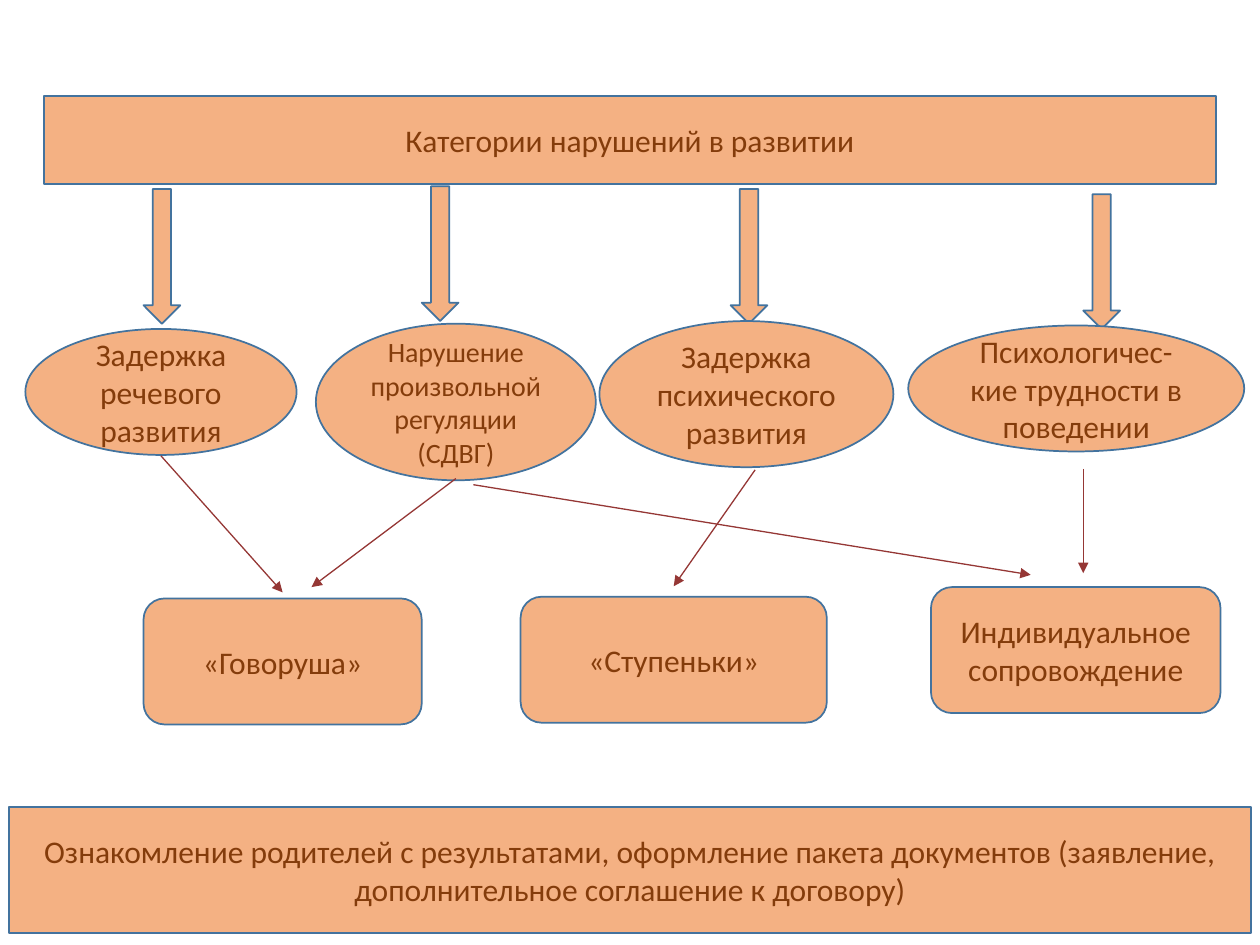
from dataclasses import dataclass
from typing import NamedTuple

from lxml.etree import SubElement
from pptx import Presentation
from pptx.dml.color import RGBColor
from pptx.enum.shapes import MSO_CONNECTOR, MSO_SHAPE
from pptx.enum.text import MSO_ANCHOR, PP_ALIGN
from pptx.oxml.ns import qn
from pptx.util import Pt


@dataclass(frozen=True)
class Theme:
    fill: RGBColor = RGBColor(0xF4, 0xB1, 0x83)
    outline: RGBColor = RGBColor(0x43, 0x73, 0x9E)
    text: RGBColor = RGBColor(0x84, 0x3C, 0x0B)
    link: RGBColor = RGBColor(0x95, 0x37, 0x35)
    font: str = "Calibri"
    body_size: float = 18
    small_size: float = 16
    outline_width: float = 1
    link_width: float = 0.75


class Box(NamedTuple):
    left: float
    top: float
    width: float
    height: float

    def inner(self, left, top, width, height):
        return Box(self.left + left, self.top + top, width, height)


THEME = Theme()
ARROW_WIDTH, ARROW_HEIGHT = 21, 77
CARD_HEIGHT = 72

ARROWS = [(0, 1.5), (159, 0), (335.5, 1.5), (537, 4.5)]
CATEGORIES = [
    ((0, 4.5, 155, 72), ["Задержка речевого развития"], THEME.body_size),
    ((166, 1.5, 160, 89.5), ["Нарушение", "произвольной регуляции (СДВГ)"], THEME.small_size),
    ((328, 0, 168, 83.5), ["Задержка психического развития"], THEME.body_size),
    ((504.5, 2.5, 192, 72), ["Психологичес-", "кие трудности в поведении"], THEME.body_size),
]
LINKS = [
    ((0, 0), (69.5, 78)),
    ((168.5, 13), (86, 75)),
    ((178.5, 16.5), (497, 68)),
    ((339.5, 8), (293, 74.5)),
    ((527, 7.5), (527, 67)),
]
PROGRAMS = [
    (0, 6.5, 159, "«Говоруша»"),
    (215.5, 5.5, 175, "«Ступеньки»"),
    (450, 0, 165.5, "Индивидуальное сопровождение"),
]


def apply_format(target, values):
    for name, value in values.items():
        setattr(target, name, value)


def paint(shape):
    shape.fill.solid()
    shape.fill.fore_color.rgb = THEME.fill
    shape.line.color.rgb = THEME.outline
    shape.line.width = Pt(THEME.outline_width)


def write(shape, lines, size=THEME.body_size):
    frame = shape.text_frame
    apply_format(frame, {"word_wrap": True, "vertical_anchor": MSO_ANCHOR.MIDDLE})
    frame.text = "\n".join(lines)
    for paragraph in frame.paragraphs:
        paragraph.alignment = PP_ALIGN.CENTER
        apply_format(paragraph.font, {"name": THEME.font, "size": Pt(size)})
        paragraph.font.color.rgb = THEME.text


def add_block(slide, kind, box, lines=(), size=THEME.body_size):
    shape = slide.shapes.add_shape(kind, *map(Pt, box))
    shape.shadow.inherit = False
    paint(shape)
    if lines:
        write(shape, lines, size)
    return shape


def place_title(slide, box):
    title = slide.shapes.title
    positions = {name: Pt(value) for name, value in box._asdict().items()}
    apply_format(title, positions)
    paint(title)
    write(title, ["Категории нарушений в развитии"])


def draw_arrows(slide, box):
    for left, top in ARROWS:
        arrow_box = box.inner(left, top, ARROW_WIDTH, ARROW_HEIGHT)
        add_block(slide, MSO_SHAPE.DOWN_ARROW, arrow_box)


def draw_categories(slide, box):
    for area, lines, size in CATEGORIES:
        add_block(slide, MSO_SHAPE.OVAL, box.inner(*area), lines, size)


def draw_programs(slide, box):
    for left, top, width, label in PROGRAMS:
        card_box = box.inner(left, top, width, CARD_HEIGHT)
        add_block(slide, MSO_SHAPE.ROUNDED_RECTANGLE, card_box, [label])


def draw_footer(slide, box):
    label = (
        "Ознакомление родителей с результатами, оформление пакета документов "
        "(заявление, дополнительное соглашение к договору)"
    )
    add_block(slide, MSO_SHAPE.RECTANGLE, box, [label])


def draw_links(slide, box):
    for start, end in LINKS:
        points = [Pt(origin + offset) for point in (start, end)
                  for origin, offset in zip((box.left, box.top), point)]
        connector = slide.shapes.add_connector(MSO_CONNECTOR.STRAIGHT, *points)
        connector.line.color.rgb = THEME.link
        connector.line.width = Pt(THEME.link_width)
        properties = connector.line._get_or_add_ln()
        SubElement(properties, qn("a:tailEnd"), type="triangle")
        SubElement(connector._element.spPr, qn("a:effectLst"))


def main():
    presentation = Presentation()
    apply_format(presentation, {"slide_width": Pt(720), "slide_height": Pt(540)})
    slide = presentation.slides.add_slide(presentation.slide_layouts[5])
    place_title(slide, Box(25, 55, 670, 50))
    draw_arrows(slide, Box(82, 106.5, 558, 81.5))
    draw_categories(slide, Box(14.5, 183.5, 696.5, 91))
    draw_programs(slide, Box(82, 335.5, 615.5, 78.5))
    draw_footer(slide, Box(5, 461, 710, 72))
    draw_links(slide, Box(92, 260.5, 527, 78))
    presentation.save("out.pptx")


if __name__ == "__main__":
    main()
